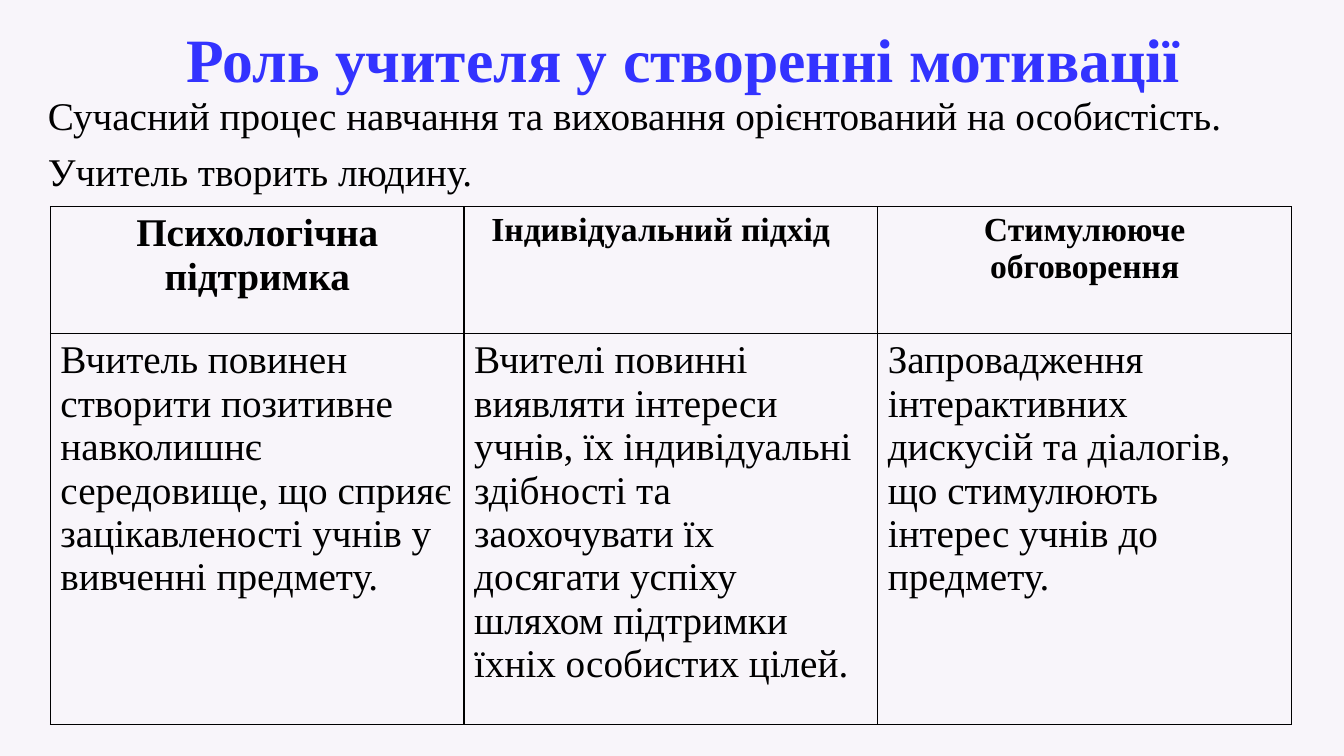
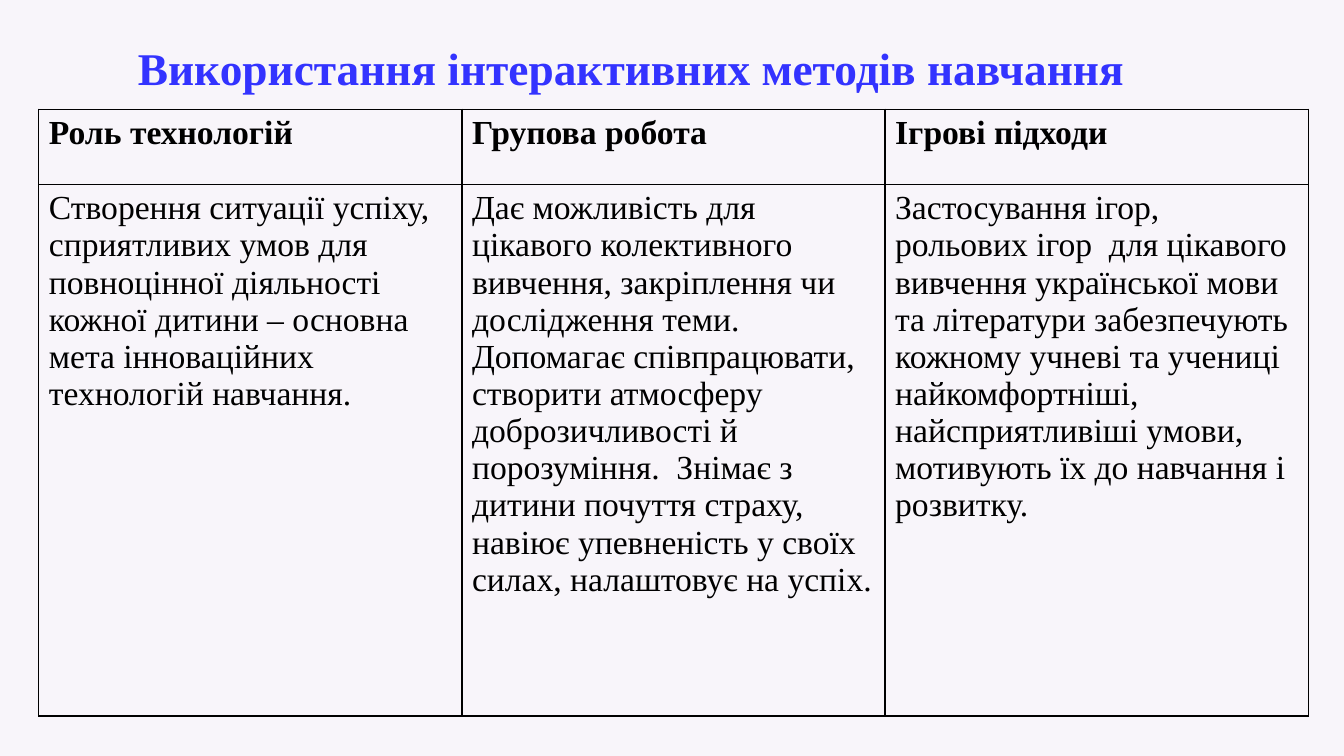
from lxml import etree
from pptx import Presentation
from pptx.dml.color import RGBColor
from pptx.enum.text import MSO_ANCHOR, MSO_AUTO_SIZE, PP_ALIGN
from pptx.oxml.ns import qn
from pptx.util import Emu, Pt

LEFT, MID = PP_ALIGN.LEFT, PP_ALIGN.CENTER
TOP, CORE = MSO_ANCHOR.TOP, MSO_ANCHOR.MIDDLE
FIXED = MSO_AUTO_SIZE.NONE
FACE = "Times New Roman"
INK, BLUE, PALE = "000000", "3333FF", "F8F5FA"
SIDES = ("a:lnL", "a:lnR", "a:lnT", "a:lnB")


def px(num):
    return Emu(num * 9525)


def rgb(code):
    return RGBColor.from_string(code)


def style(para, size, color=INK, bold=False, align=LEFT):
    para.alignment = align
    font = para.font
    font.name, font.size, font.bold = FACE, Pt(size), bold
    font.color.rgb = rgb(color)


def place(shape, box, anchor):
    shape.left, shape.top, shape.width, shape.height = map(px, box)
    frame = shape.text_frame
    frame.word_wrap = True
    frame.auto_size = FIXED
    frame.vertical_anchor = anchor
    return frame


def add_title(slide, text, box, size, align):
    frame = place(slide.shapes.title, box, CORE)
    frame.text = text
    para = frame.paragraphs[0]
    style(para, size, BLUE, True, align)
    para.line_spacing = 0.9


def add_body(slide, lines, box):
    frame = place(slide.placeholders[1], box, TOP)
    frame.text = "\n".join(lines)
    for para in frame.paragraphs:
        style(para, 28)
        para.line_spacing = 0.9
        para.space_before = Pt(10)
        props = para._p.get_or_add_pPr()
        props.set("marL", "0")
        props.set("indent", "0")
        etree.SubElement(props, qn("a:buNone"))


def add_edges(cell):
    props = cell._tc.get_or_add_tcPr()
    for side in SIDES:
        line = etree.SubElement(props, qn(side), w=str(Pt(1)))
        fill = etree.SubElement(line, qn("a:solidFill"))
        etree.SubElement(fill, qn("a:srgbClr"), val=INK)


def fill_cell(cell, text, size, bold, align):
    cell.text = text
    style(cell.text_frame.paragraphs[0], size, INK, bold, align)
    add_edges(cell)
    cell.fill.background()


def add_grid(slide, spot, width, highs, heads, texts, size):
    left, top = spot
    count = len(heads)
    frame = slide.shapes.add_table(
        2, count, px(left), px(top), px(width * count), px(sum(highs)))
    table = frame.table
    table.first_row = table.horz_banding = False
    for row, high in zip(table.rows, highs):
        row.height = px(high)
    for col, (head, text) in enumerate(zip(heads, texts)):
        table.columns[col].width = px(width)
        title, points, align = head
        fill_cell(table.cell(0, col), title, points, True, align)
        fill_cell(table.cell(1, col), text, size, False, LEFT)
    return table


def add_role(deck):
    slide = deck.slides.add_slide(deck.slide_layouts[1])
    add_title(slide, "Роль учителя у створенні мотивації",
              (168, 14, 1024, 91), 44, LEFT)
    add_body(slide, [
        "Сучасний процес навчання та виховання орієнтований на особистість.",
        "Учитель творить людину.",
    ], (36, 87, 1228, 561))
    table = add_grid(slide, (48, 197), 394, (121, 372), [
        ("Психологічна підтримка", 28, MID),
        ("Індивідуальний підхід", 24, LEFT),
        ("Стимулююче обговорення", 24, MID),
    ], [
        "Вчитель повинен створити позитивне навколишнє середовище, "
        "що сприяє зацікавленості учнів у вивченні предмету.",
        "Вчителі повинні виявляти інтереси учнів, їх індивідуальні здібності "
        "та заохочувати їх досягати успіху шляхом підтримки "
        "їхніх особистих цілей.",
        "Запровадження інтерактивних дискусій та діалогів, "
        "що стимулюють інтерес учнів до предмету.",
    ], 28)
    table.cell(0, 1).margin_left = px(26)


def add_methods(deck):
    slide = deck.slides.add_slide(deck.slide_layouts[5])
    add_title(slide, "Використання інтерактивних методів навчання",
              (23, 38, 1156, 58), 32.4, MID)
    heads = ["Роль технологій", "Групова робота", "Ігрові підходи"]
    add_grid(slide, (37, 104), 403, (72, 506),
             [(head, 24, LEFT) for head in heads], [
        "Створення ситуації успіху, сприятливих умов для повноцінної "
        "діяльності кожної дитини – основна мета інноваційних "
        "технологій навчання.",
        "Дає можливість для цікавого колективного вивчення, закріплення чи "
        "дослідження теми. Допомагає співпрацювати, створити атмосферу "
        "доброзичливості й порозуміння.  Знімає з дитини почуття страху, "
        "навіює упевненість у своїх силах, налаштовує на успіх.",
        "Застосування ігор, рольових ігор  для цікавого вивчення української "
        "мови та літератури забезпечують кожному учневі та учениці "
        "найкомфортніші, найсприятливіші умови, мотивують їх до навчання "
        "і розвитку.",
    ], 24)


def main():
    deck = Presentation()
    deck.slide_width, deck.slide_height = px(1280), px(720)
    fill = deck.slide_master.background.fill
    fill.solid()
    fill.fore_color.rgb = rgb(PALE)
    add_role(deck)
    add_methods(deck)
    deck.save("out.pptx")


if __name__ == "__main__":
    main()
